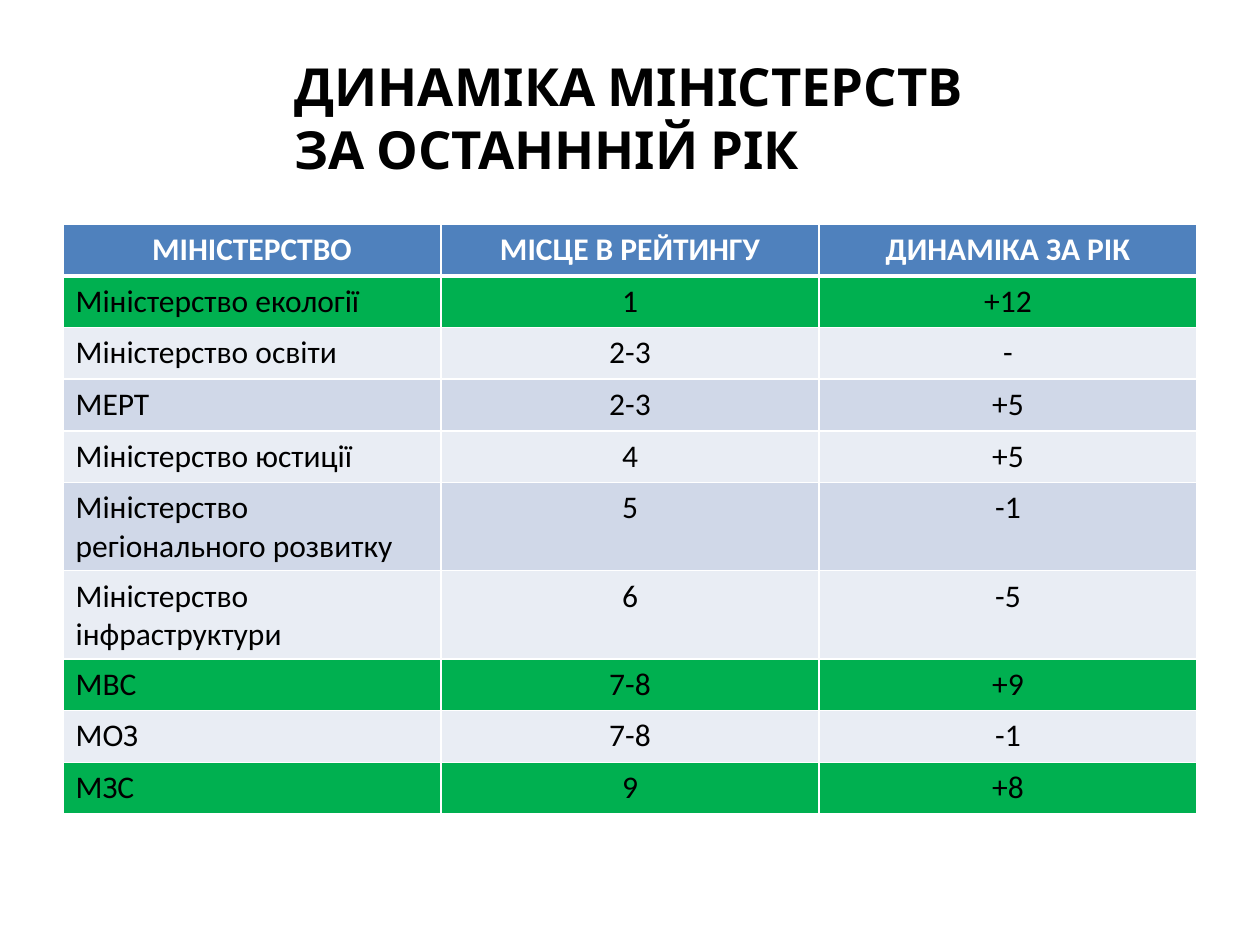
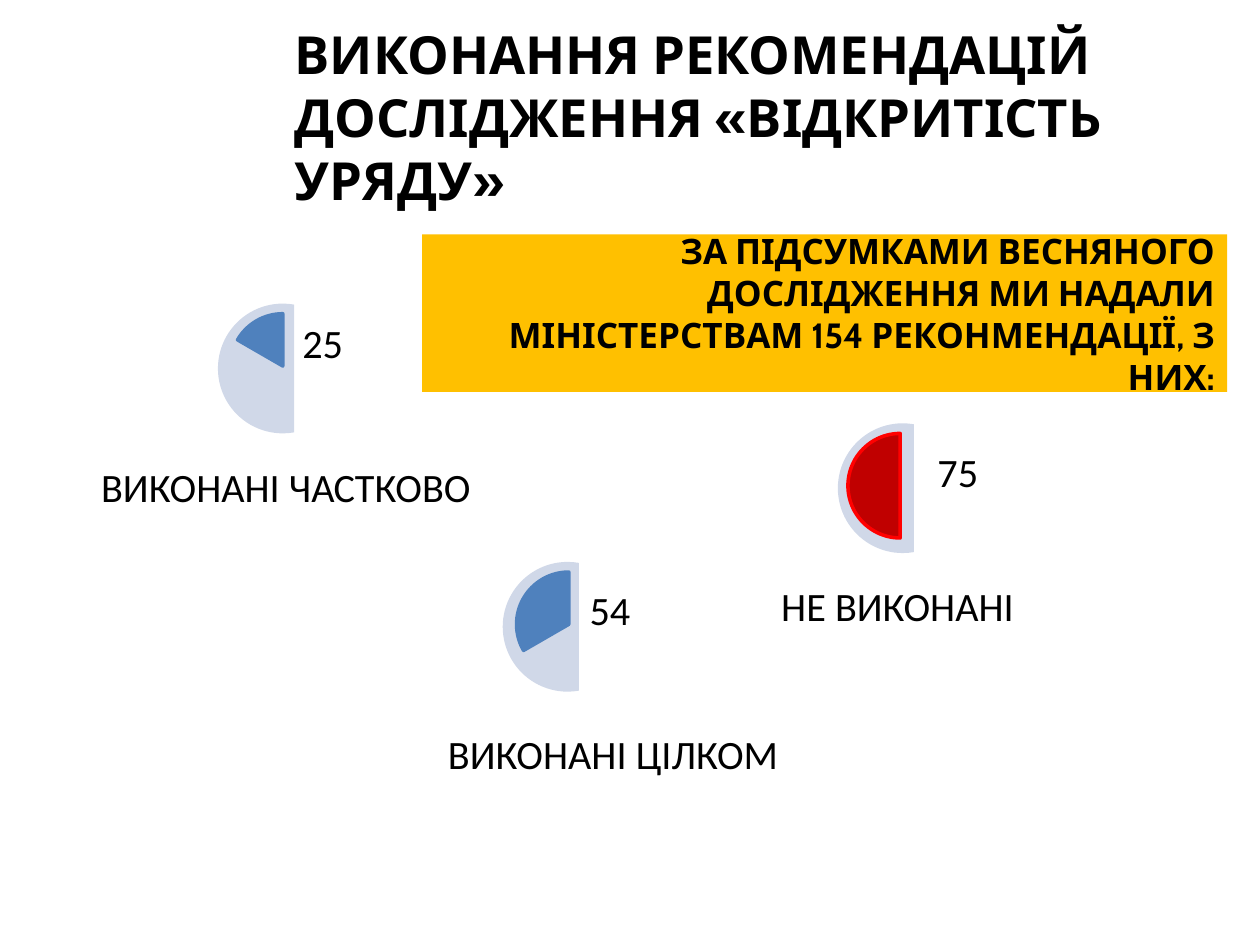
from dataclasses import dataclass
from typing import NamedTuple

from lxml.etree import SubElement
from pptx import Presentation
from pptx.dml.color import RGBColor
from pptx.enum.shapes import MSO_SHAPE
from pptx.enum.text import MSO_ANCHOR, PP_ALIGN
from pptx.oxml.ns import qn
from pptx.util import Inches, Pt


@dataclass(frozen=True)
class Theme:
    black: str = "000000"
    white: str = "FFFFFF"
    blue: str = "4F81BD"
    band_dark: str = "D0D8E8"
    band_light: str = "E9EDF4"
    green: str = "00B050"
    amber: str = "FFC000"
    dark_red: str = "C00000"
    red: str = "FF0000"
    heading_font: str = "Cabin"
    body_font: str = "Calibri"
    title_size: int = 30
    banner_size: int = 20
    table_size: int = 18
    dial_size: int = 23


THEME = Theme()

HEADERS = ["МІНІСТЕРСТВО", "МІСЦЕ В РЕЙТИНГУ", "ДИНАМІКА ЗА РІК"]
# Ministry, place, change over the year, strong growth
RANKING = [
    ("Міністерство екології", "1", "+12", True),
    ("Міністерство освіти", "2-3", "-", False),
    ("МЕРТ", "2-3", "+5", False),
    ("Міністерство юстиції", "4", "+5", False),
    ("Міністерство регіонального розвитку", "5", "-1", False),
    ("Міністерство інфраструктури", "6", "-5", False),
    ("МВС", "7-8", "+9", True),
    ("МОЗ", "7-8", "-1", False),
    ("МЗС", "9", "+8", True),
]


class Dial(NamedTuple):
    """A half disc with a wedge, its count and its caption."""
    count: str
    caption: str
    disc_at: tuple
    wedge_at: tuple
    wedge_start: int
    count_box: tuple
    caption_at: tuple
    caption_align: PP_ALIGN = PP_ALIGN.RIGHT
    wedge_fill: str = THEME.blue
    wedge_line: str = THEME.blue


DIALS = [
    Dial("25", "ВИКОНАНІ ЧАСТКОВО", (1.73, 2.41), (1.83, 2.49), 210,
         (2.4, 2.57, 2.06, 4.13), (0.75, 3.44)),
    Dial("54", "ВИКОНАНІ ЦІЛКОМ", (3.99, 4.46), (4.1, 4.54), 150,
         (4.68, 4.69, 2.06, 0.95), (3.19, 5.56)),
    Dial("75", "НЕ ВИКОНАНІ", (6.65, 3.36), (6.73, 3.44), 90,
         (7.44, 3.59, 2.06, 2.09), (5.63, 4.38),
         PP_ALIGN.CENTER, THEME.dark_red, THEME.red),
]
DISC_SIZE, WEDGE_SIZE, CAPTION_SIZE = (1.03, 1.03), (0.83, 0.83), (2.99, 0.62)


def rgb(color):
    return RGBColor.from_string(color)


def add_run(paragraph, text, size, font, color=THEME.black, bold=False):
    run = paragraph.add_run()
    run.text = text
    run.font.size = Pt(size)
    run.font.name = font
    run.font.bold = bold
    run.font.color.rgb = rgb(color)


def add_text_box(slide, box, anchor):
    frame = slide.shapes.add_textbox(*map(Inches, box)).text_frame
    frame.word_wrap = True
    frame.vertical_anchor = anchor
    return frame


def add_title(slide, *lines):
    frame = add_text_box(slide, (2.24, 0.3, 7.26, 1.25), MSO_ANCHOR.MIDDLE)
    paragraph = frame.paragraphs[0]
    for index, line in enumerate(lines):
        if index:
            paragraph.add_line_break()
        add_run(paragraph, line, THEME.title_size, THEME.heading_font, bold=True)


def add_filled_shape(slide, kind, box, fill, line=None):
    shape = slide.shapes.add_shape(kind, *map(Inches, box))
    shape.shadow.inherit = False
    shape.fill.solid()
    shape.fill.fore_color.rgb = rgb(fill)
    if line:
        shape.line.color.rgb = rgb(line)
        shape.line.width = Pt(2)
    else:
        shape.line.fill.background()
    return shape


def add_sector(slide, kind, box, start, end, fill, line=None):
    sector = add_filled_shape(slide, kind, box, fill, line)
    # Angles are held in 60000ths of a degree, adjustments in 100000ths
    for index, degrees in enumerate((start, end)):
        sector.adjustments[index] = degrees * 0.6


def add_banner(slide, text):
    banner = add_filled_shape(slide, MSO_SHAPE.RECTANGLE,
                              (3.35, 1.86, 6.39, 1.25), THEME.amber)
    frame = banner.text_frame
    frame.word_wrap = True
    frame.vertical_anchor = MSO_ANCHOR.MIDDLE
    frame.paragraphs[0].alignment = PP_ALIGN.RIGHT
    add_run(frame.paragraphs[0], text, THEME.banner_size,
            THEME.heading_font, bold=True)


def add_dial_text(slide, box, text, anchor, align):
    frame = add_text_box(slide, box, anchor)
    frame.margin_left = frame.margin_right = 0
    frame.margin_top = frame.margin_bottom = 0
    paragraph = frame.paragraphs[0]
    paragraph.alignment = align
    paragraph.line_spacing = 0.9
    add_run(paragraph, text, THEME.dial_size, THEME.body_font)


def add_dial(slide, dial):
    add_sector(slide, MSO_SHAPE.CHORD, dial.disc_at + DISC_SIZE,
               80, 280, THEME.band_dark)
    add_sector(slide, MSO_SHAPE.PIE, dial.wedge_at + WEDGE_SIZE,
               dial.wedge_start, 270, dial.wedge_fill, dial.wedge_line)
    add_dial_text(slide, dial.caption_at + CAPTION_SIZE, dial.caption,
                  MSO_ANCHOR.BOTTOM, dial.caption_align)
    add_dial_text(slide, dial.count_box, dial.count,
                  MSO_ANCHOR.TOP, PP_ALIGN.LEFT)


def set_borders(cell, bottom):
    properties = cell._tc.get_or_add_tcPr()
    for side, points in (("L", 1), ("R", 1), ("T", 1), ("B", bottom)):
        border = SubElement(properties, qn(f"a:ln{side}"), w=str(Pt(points)))
        fill = SubElement(border, qn("a:solidFill"))
        SubElement(fill, qn("a:srgbClr"), val=THEME.white)


def fill_cell(cell, text, fill, align, header=False):
    set_borders(cell, bottom=3 if header else 1)
    cell.fill.solid()
    cell.fill.fore_color.rgb = rgb(fill)
    paragraph = cell.text_frame.paragraphs[0]
    paragraph.alignment = align
    add_run(paragraph, text, THEME.table_size, THEME.body_font,
            THEME.white if header else THEME.black, header)


def add_ranking_table(slide):
    row_count = len(RANKING) + 1
    table = slide.shapes.add_table(
        row_count, len(HEADERS), Inches(0.5), Inches(1.78),
        Inches(9), Inches(0.41 * row_count)).table
    table.horz_banding = False
    for column, header in enumerate(HEADERS):
        fill_cell(table.cell(0, column), header, THEME.blue,
                  PP_ALIGN.CENTER, header=True)
    for row, (*values, strong_growth) in enumerate(RANKING, start=1):
        band = THEME.band_dark if row % 2 else THEME.band_light
        for column, value in enumerate(values):
            fill_cell(table.cell(row, column), value,
                      THEME.green if strong_growth else band,
                      PP_ALIGN.CENTER if column else PP_ALIGN.LEFT)


def main():
    deck = Presentation()
    deck.slide_width, deck.slide_height = Inches(10), Inches(7.5)
    blank = deck.slide_layouts[6]

    # Ranking of ministries
    ranking = deck.slides.add_slide(blank)
    add_title(ranking, "ДИНАМІКА МІНІСТЕРСТВ", "ЗА ОСТАНННІЙ РІК")
    add_ranking_table(ranking)

    # Follow-up on recommendations
    follow_up = deck.slides.add_slide(blank)
    add_title(follow_up,
              "ВИКОНАННЯ РЕКОМЕНДАЦІЙ ДОСЛІДЖЕННЯ «ВІДКРИТІСТЬ УРЯДУ»")
    for dial in DIALS:
        add_dial(follow_up, dial)
    add_banner(follow_up, "ЗА ПІДСУМКАМИ ВЕСНЯНОГО ДОСЛІДЖЕННЯ МИ НАДАЛИ "
                          "МІНІСТЕРСТВАМ 154 РЕКОНМЕНДАЦІЇ, З НИХ:")

    deck.save("out.pptx")


if __name__ == "__main__":
    main()
